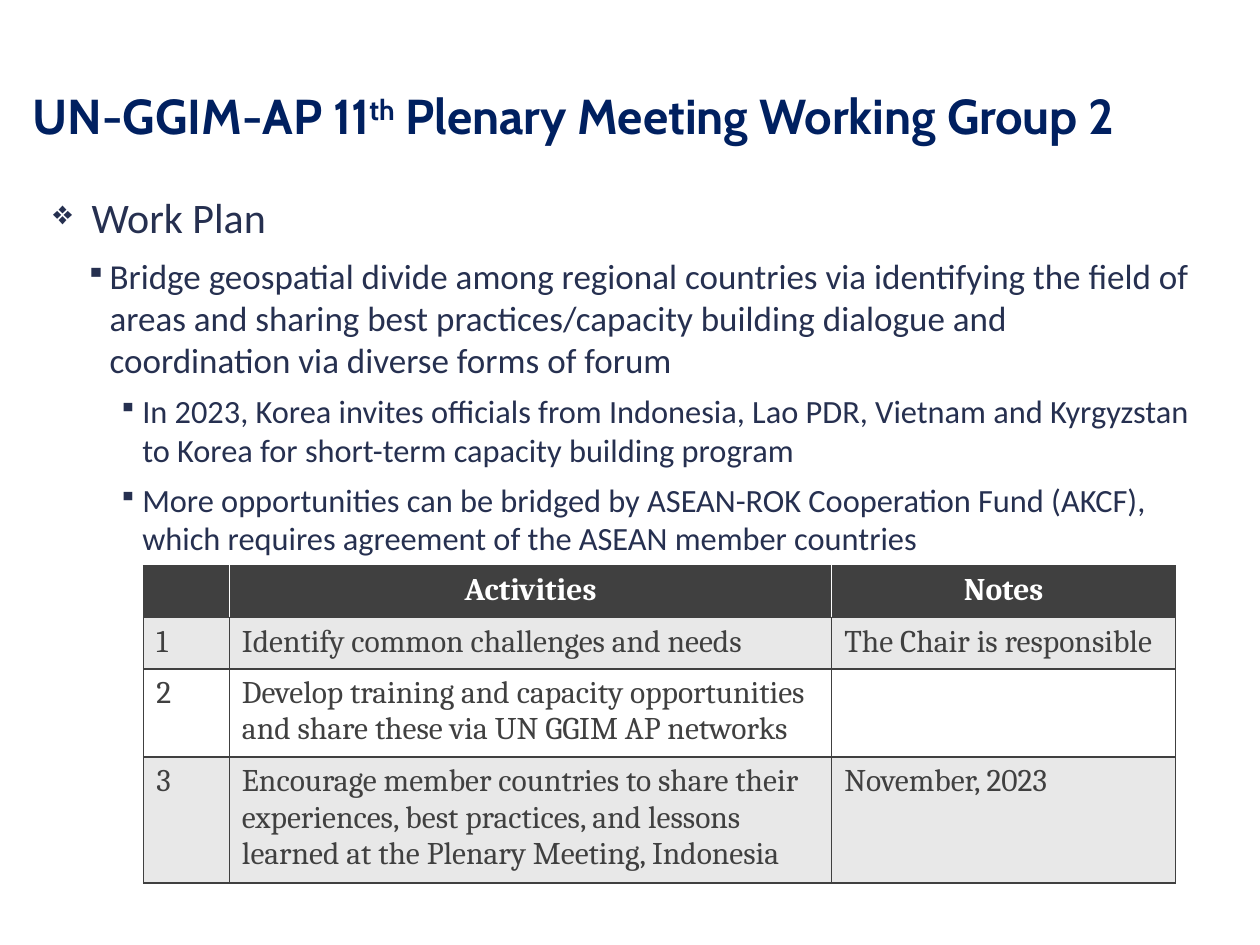
from dataclasses import dataclass

from lxml.etree import SubElement
from pptx import Presentation
from pptx.dml.color import RGBColor as Color
from pptx.enum.text import PP_ALIGN as Align
from pptx.oxml.ns import qn
from pptx.util import Pt


@dataclass(frozen=True)
class Theme:
    title: str = "002060"
    body: str = "263050"
    dark: str = "404040"
    band: str = "E8E8E8"
    white: str = "FFFFFF"
    title_size: float = 28
    table_size: float = 18
    level_sizes: tuple = (24, 20, 18.5)


theme = Theme()


def style(font, name, size, color, bold=False):
    font.name, font.size, font.bold = name, Pt(size), bold
    font.color.rgb = Color.from_string(color)


def add_border(cell, side, color):
    line = SubElement(cell._tc.get_or_add_tcPr(), qn(f"a:ln{side}"), w=str(Pt(1)))
    fill = SubElement(line, qn("a:solidFill"))
    SubElement(fill, qn("a:srgbClr"), val=color)


deck = Presentation()
deck.slide_width, deck.slide_height = Pt(720), Pt(540)
page = deck.slides.add_slide(deck.slide_layouts[6])

# Work plan: level, text
plan = [
    (0, "Work Plan"),
    (1, "Bridge geospatial divide among regional countries via identifying "
        "the field of areas and sharing best practices/capacity building "
        "dialogue and coordination via diverse forms of forum"),
    (2, "In 2023, Korea invites officials from Indonesia, Lao PDR, Vietnam "
        "and Kyrgyzstan to Korea for short-term capacity building program"),
    (2, "More opportunities can be bridged by ASEAN-ROK Cooperation Fund "
        "(AKCF), which requires agreement of the ASEAN member countries"),
]
# Per level: bullet, left margin, hanging indent, space before
levels = [("❖", 25, 22, 0), ("▪", 35.3, 13.7, 7.5), ("▪", 54, 13.7, 6)]

plan_box = page.shapes.add_textbox(Pt(20.2), Pt(105.8), Pt(668.9), Pt(374.4))
frame = plan_box.text_frame
frame.word_wrap = True
for index, (level, text) in enumerate(plan):
    para = frame.paragraphs[0] if index == 0 else frame.add_paragraph()
    bullet, margin, hanging, gap = levels[level]
    para.text = text
    para.level = level
    para.space_before = Pt(gap)
    props = para._p.get_or_add_pPr()
    props.set("marL", str(Pt(margin)))
    props.set("indent", str(-Pt(hanging)))
    bullet_color = SubElement(props, qn("a:buClr"))
    SubElement(bullet_color, qn("a:srgbClr"), val=theme.body)
    SubElement(props, qn("a:buSzPct"), val="80000")
    SubElement(props, qn("a:buChar"), char=bullet)
    style(para.font, "Calibri", theme.level_sizes[level], theme.body)

title_box = page.shapes.add_textbox(Pt(11.5), Pt(43.2), Pt(694.8), Pt(43.9))
title_box.text_frame.word_wrap = True
para = title_box.text_frame.paragraphs[0]
para.line_spacing = 1.07
para.space_after = Pt(6)
style(para.font, "Cabin", theme.title_size, theme.title, bold=True)
for text in ("UN-GGIM-AP 11", "th", " Plenary Meeting Working Group 2"):
    span = para.add_run()
    span.text = text
    if text == "th":
        span.font._element.set("baseline", "30000")

rows = [
    ("", "Activities", "Notes"),
    ("1", "Identify common challenges and needs", "The Chair is responsible"),
    ("2", "Develop training and capacity opportunities and share these via "
          "UN GGIM AP networks", ""),
    ("3", "Encourage member countries to share their experiences, best "
          "practices, and lessons learned at the Plenary Meeting, Indonesia",
     "November, 2023"),
]
column_widths = (49, 344.2, 196.6)
row_heights = (29.5, 29.5, 50.4, 72)
table = page.shapes.add_table(
    len(rows), len(column_widths), Pt(82.1), Pt(323.3),
    Pt(sum(column_widths)), Pt(sum(row_heights))).table
table.horz_banding = False
for column, width in zip(table.columns, column_widths):
    column.width = Pt(width)
for row, height in zip(table.rows, row_heights):
    row.height = Pt(height)

last_column = len(column_widths) - 1
for r, texts in enumerate(rows):
    header = r == 0
    for c, text in enumerate(texts):
        cell = table.cell(r, c)
        left = theme.white if header and c > 0 else theme.dark
        right = theme.white if header and c < last_column else theme.dark
        for side, color in zip("LRTB", (left, right, theme.dark, theme.dark)):
            add_border(cell, side, color)
        cell.fill.solid()
        fill = theme.dark if header else theme.band if r % 2 else theme.white
        cell.fill.fore_color.rgb = Color.from_string(fill)
        para = cell.text_frame.paragraphs[0]
        para.text = text
        para.alignment = Align.CENTER if header else Align.LEFT
        style(para.font, "Cambria", theme.table_size,
              theme.white if header else theme.dark, bold=header)

deck.save("out.pptx")
